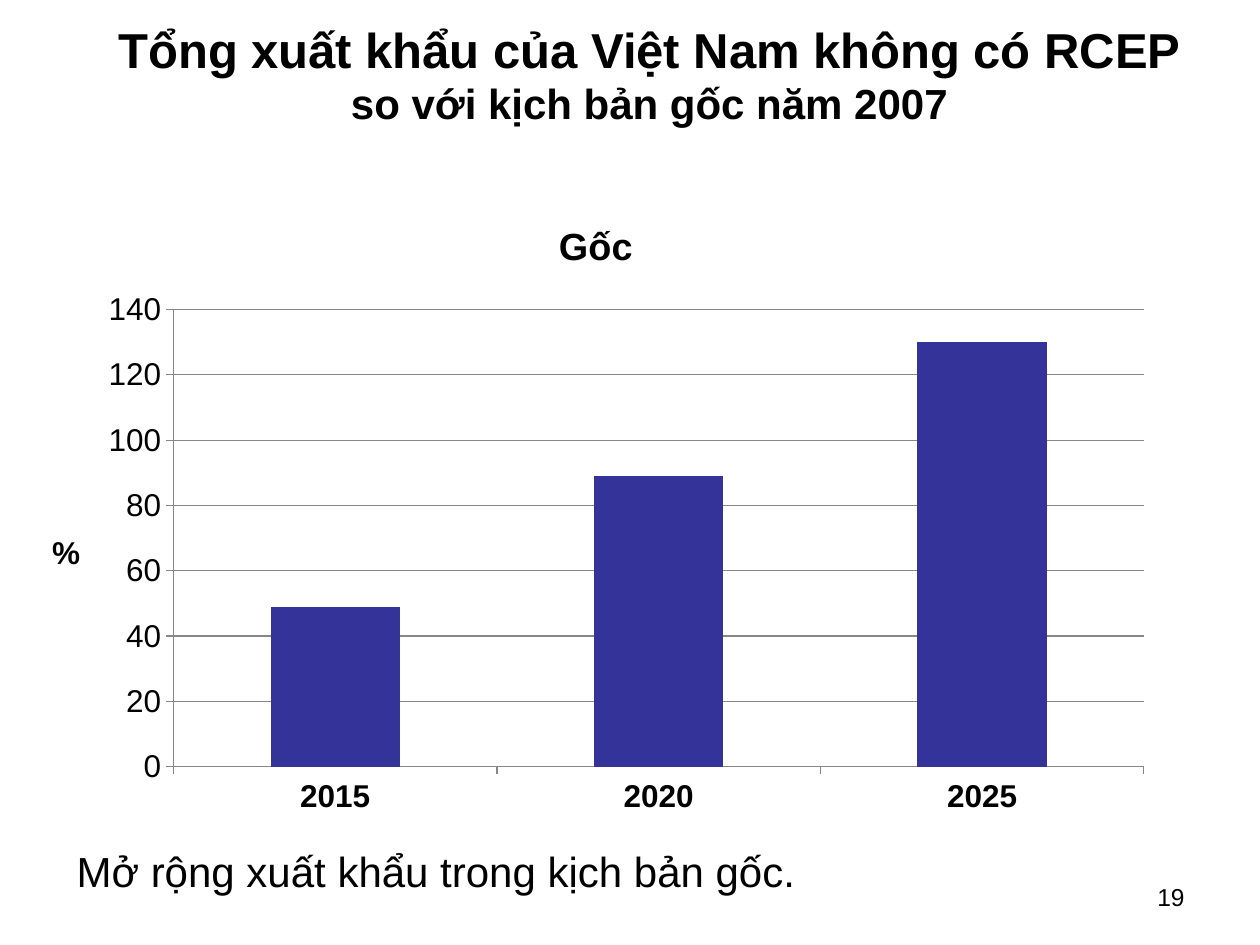
from dataclasses import dataclass

from lxml import etree
from pptx import Presentation
from pptx.chart.data import CategoryChartData
from pptx.dml.color import RGBColor
from pptx.enum import chart as ch, text
from pptx.util import Pt

HEADING = "Tổng xuất khẩu của Việt Nam không có RCEP"
SUBHEADING = "so với kịch bản gốc năm 2007"
EXPORTS = {"2015": 49, "2020": 89, "2025": 130}
CHART_TITLE, UNIT = "Gốc", "%"
REMARK = "Mở rộng xuất khẩu trong kịch bản gốc."
PAGE = "19"

# left, top, width, height in points
HEADING_BOX = (36.7, 15.1, 668.9, 54)
CHART_BOX = (14.4, 111.6, 652.3, 362.9)
REMARK_BOX = (36.7, 479.5, 561.6, 45.4)
PAGE_BOX = (624.2, 500.4, 59.8, 28.8)
PLOT = {"x": 0.13, "y": 0.18, "w": 0.85, "h": 0.72}  # shares of the chart


@dataclass(frozen=True)
class Theme:
    font: str = "Arial"
    ink: RGBColor = RGBColor(0, 0, 0)
    bar: RGBColor = RGBColor(0x33, 0x33, 0x99)
    grid: RGBColor = RGBColor(0x87, 0x87, 0x87)
    heading: float = 28
    body: float = 24
    chart_title: float = 21.6
    axis: float = 18
    page: float = 14


THEME = Theme()


def points(box):
    return [Pt(length) for length in box]


def style(font, size, bold=False):
    font.name, font.size, font.bold = THEME.font, Pt(size), bold
    font.color.rgb = THEME.ink


def add_heading(slide):
    heading = slide.shapes.title
    heading.left, heading.top, heading.width, heading.height = points(HEADING_BOX)
    frame = heading.text_frame
    frame.vertical_anchor = text.MSO_ANCHOR.MIDDLE
    frame.auto_size = text.MSO_AUTO_SIZE.NONE
    line = frame.paragraphs[0]
    line.alignment = text.PP_ALIGN.CENTER
    style(line.font, THEME.heading, bold=True)
    line.add_run().text = HEADING
    line.add_line_break()
    subheading = line.add_run()
    subheading.text = SUBHEADING
    subheading.font.size = Pt(THEME.body)


def add_label(slide, words, box, size, align):
    frame = slide.shapes.add_textbox(*points(box)).text_frame
    frame.word_wrap = True
    line = frame.paragraphs[0]
    line.text, line.alignment = words, align
    style(line.font, size)


def title_line(frame, words, size):
    frame.text = words
    style(frame.paragraphs[0].font, size, bold=True)


def place_plot(chart):
    """Fix the inner plot area as shares of the chart's size."""
    area = chart.plots[0]._element.getparent()
    ns = area.nsmap["c"]
    for old in area.findall(f"{{{ns}}}layout"):
        area.remove(old)
    layout = etree.Element(f"{{{ns}}}layout")
    manual = etree.SubElement(layout, f"{{{ns}}}manualLayout")
    settings = {"layoutTarget": "inner", "xMode": "edge", "yMode": "edge", **PLOT}
    for tag, value in settings.items():
        etree.SubElement(manual, f"{{{ns}}}{tag}", val=str(value))
    area.insert(0, layout)


def add_export_chart(slide):
    data = CategoryChartData()
    data.categories = list(EXPORTS)
    data.add_series(CHART_TITLE, list(EXPORTS.values()))
    chart = slide.shapes.add_chart(
        ch.XL_CHART_TYPE.COLUMN_CLUSTERED, *points(CHART_BOX), data).chart
    style(chart.font, THEME.axis)
    chart.has_legend = False
    chart.has_title = True
    title_line(chart.chart_title.text_frame, CHART_TITLE, THEME.chart_title)
    chart.chart_title.include_in_layout = False

    columns = chart.plots[0]
    columns.gap_width, columns.vary_by_categories = 150, False
    fill = columns.series[0].format.fill
    fill.solid()
    fill.fore_color.rgb = THEME.bar

    years, percent = chart.category_axis, chart.value_axis
    percent.has_major_gridlines = True
    percent.minimum_scale, percent.maximum_scale, percent.major_unit = 0, 140, 20
    for axis in (years, percent):
        axis.major_tick_mark = ch.XL_TICK_MARK.OUTSIDE
        style(axis.tick_labels.font, THEME.axis, bold=axis is years)
    for part in (years, percent, percent.major_gridlines):
        part.format.line.color.rgb = THEME.grid
        part.format.line.width = Pt(0.75)
    percent.has_title = True
    unit = percent.axis_title.text_frame
    title_line(unit, UNIT, THEME.axis)
    unit._txBody.bodyPr.set("rot", "0")
    unit._txBody.bodyPr.set("vert", "horz")
    place_plot(chart)


def main():
    deck = Presentation()
    deck.slide_width, deck.slide_height = Pt(720), Pt(540)
    slide = deck.slides.add_slide(deck.slide_layouts[5])
    add_heading(slide)
    add_label(slide, PAGE, PAGE_BOX, THEME.page, text.PP_ALIGN.RIGHT)
    add_export_chart(slide)
    add_label(slide, REMARK, REMARK_BOX, THEME.body, text.PP_ALIGN.LEFT)
    deck.save("out.pptx")


if __name__ == "__main__":
    main()
